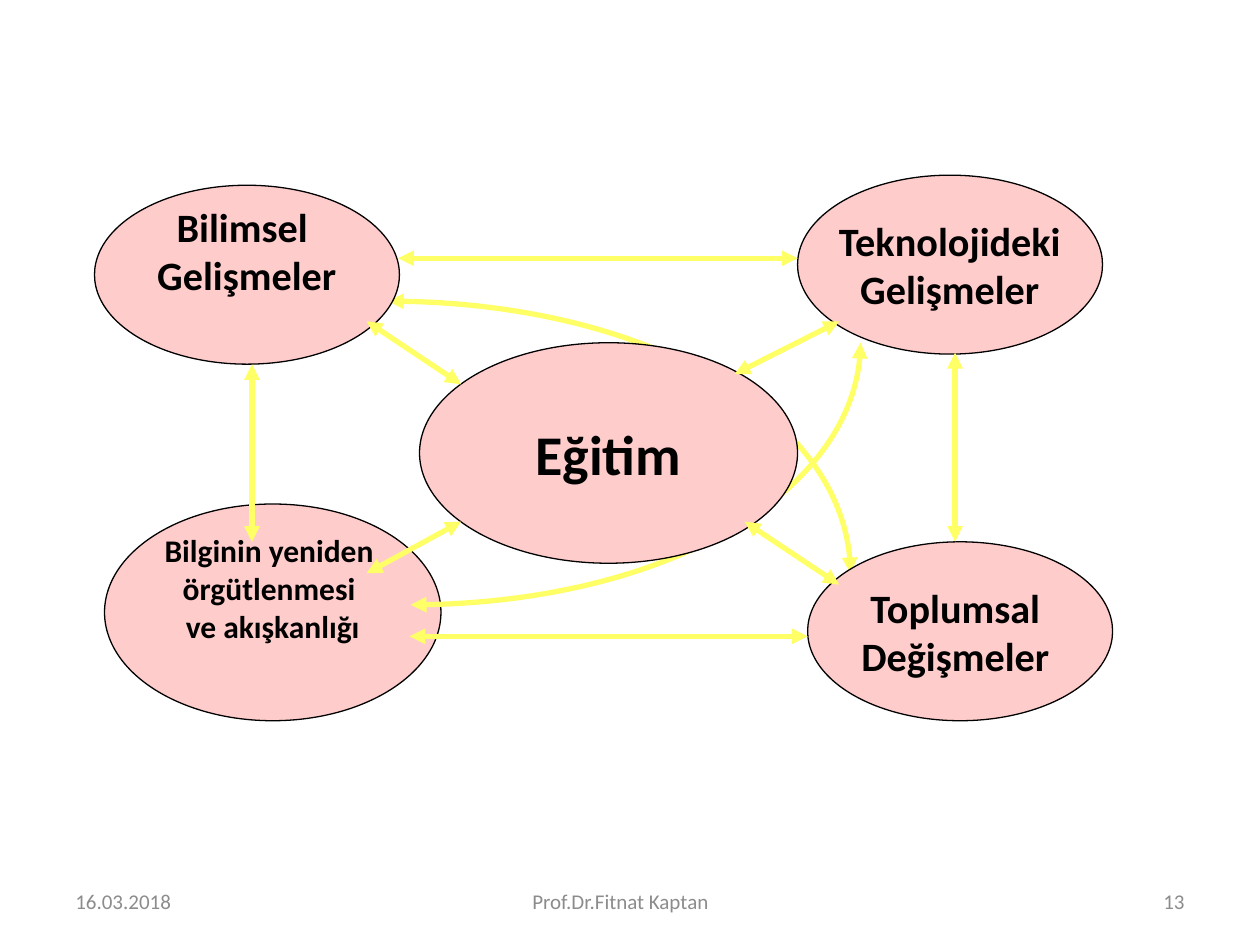
from lxml import etree
from pptx import Presentation
from pptx import util as u
from pptx.dml.color import RGBColor
from pptx.enum import shapes, text
from pptx.oxml.ns import qn

PINK = RGBColor(0xFF, 0xCC, 0xCC)
YELLOW = RGBColor(0xFF, 0xFF, 0x66)
BLACK = RGBColor(0, 0, 0)
GRAY = RGBColor(0x8C, 0x8C, 0x8C)
FONT = "Calibri"
LEFT, CENTER, RIGHT = text.PP_ALIGN.LEFT, text.PP_ALIGN.CENTER, text.PP_ALIGN.RIGHT

# Ellipses: lines, size in points, (left, top, width, height), upward text lift
KNOWLEDGE = (["Bilginin yeniden ", "örgütlenmesi ", "ve akışkanlığı"], 18, (0.83, 4, 2.67, 1.72), 0.39)
TOPICS = [
    (["Eğitim"], 32, (3.33, 2.72, 3, 1.75), 0),
    (["Teknolojideki", "Gelişmeler"], 23, (6.33, 1.39, 2.42, 1.42), 0),
    (["Toplumsal ", "Değişmeler "], 23, (6.41, 4.3, 2.42, 1.42), 0),
    (["Bilimsel ", "Gelişmeler"], 23, (0.75, 1.47, 2.42, 1.42), 0.39),
]
# Quarter-ellipse links: start and end, leaving horizontally, arriving vertically
CURVES = [((3.26, 4.8), (6.83, 2.72)), ((3.08, 2.39), (6.75, 4.55))]
# Straight links: start and end
LINKS = [
    ((3.66, 4.14), (2.91, 4.55)),
    ((6.66, 2.55), (5.83, 2.97)),
    ((3.66, 3.05), (2.91, 2.55)),
    ((6.66, 4.64), (5.91, 4.14)),
    ((2, 2.89), (2, 4.3)),
    ((7.58, 2.8), (7.58, 4.3)),
    ((3.25, 5.05), (6.41, 5.05)),
    ((3.16, 2.05), (6.33, 2.05)),
]
# Footer: text, left, width, alignment, right inset
FOOTER = [
    ("16.03.2018", 0.5, 2.33, LEFT, 0.1),
    ("Prof.Dr.Fitnat Kaptan", 3.42, 3.17, CENTER, 0.26),
    ("13", 7.17, 2.33, RIGHT, 0.1),
]
ROUNDNESS = 0.5523  # Bezier handle length for a quarter ellipse


def write(shape, lines, size, color=BLACK, bold=False, align=CENTER,
          wrap=False, right=0.1, bottom=0.05):
    frame = shape.text_frame
    frame.word_wrap = wrap
    frame.vertical_anchor = text.MSO_ANCHOR.MIDDLE
    frame.margin_right = u.Inches(right)
    frame.margin_bottom = u.Inches(bottom)
    for index, line in enumerate(lines):
        paragraph = frame.paragraphs[0] if index == 0 else frame.add_paragraph()
        paragraph.alignment = align
        run = paragraph.add_run()
        run.text = line
        run.font.name, run.font.size, run.font.bold = FONT, u.Pt(size), bold
        run.font.color.rgb = color


def add_topic(slide, lines, size, box, lift):
    shape = slide.shapes.add_shape(shapes.MSO_SHAPE.OVAL, *map(u.Inches, box))
    shape.shadow.inherit = False
    shape.fill.solid()
    shape.fill.fore_color.rgb = PINK
    shape.line.color.rgb = BLACK
    shape.line.width = u.Pt(0.75)
    write(shape, lines, size, bold=True, bottom=0.05 + lift)


def style_arrow(shape):
    shape.line.color.rgb = YELLOW
    shape.line.width = u.Pt(3)
    line = shape.line._get_or_add_ln()
    for end in ("a:headEnd", "a:tailEnd"):
        etree.SubElement(line, qn(end), type="triangle")


def add_curve(slide, start, end):
    (x1, y1), (x2, y2) = start, end
    points = [(x1 + ROUNDNESS * (x2 - x1), y1), (x2, y2 - ROUNDNESS * (y2 - y1)), end]
    builder = slide.shapes.build_freeform(*map(u.Inches, start))
    builder.add_line_segments([tuple(map(u.Inches, p)) for p in points], close=False)
    shape = builder.convert_to_shape()
    shape.shadow.inherit = False
    shape.fill.background()
    style_arrow(shape)
    # Turn the three segments into one cubic curve
    segments = list(shape._element.iter(qn("a:lnTo")))
    curve = etree.SubElement(segments[0].getparent(), qn("a:cubicBezTo"))
    for segment in segments:
        curve.append(segment[0])
        segment.getparent().remove(segment)


def add_link(slide, start, end):
    connector = slide.shapes.add_connector(
        shapes.MSO_CONNECTOR.STRAIGHT, *map(u.Inches, start + end))
    style_arrow(connector)
    etree.SubElement(connector._element.spPr, qn("a:effectLst"))


def main():
    presentation = Presentation()
    presentation.slide_width, presentation.slide_height = u.Inches(10), u.Inches(7.5)
    slide = presentation.slides.add_slide(presentation.slide_layouts[6])

    # The curves lie above the knowledge ellipse and below the others
    add_topic(slide, *KNOWLEDGE)
    for curve in CURVES:
        add_curve(slide, *curve)
    for topic in TOPICS:
        add_topic(slide, *topic)
    for link in LINKS:
        add_link(slide, *link)

    # Footer
    for label, left, width, align, right in FOOTER:
        box = slide.shapes.add_textbox(*map(u.Inches, (left, 6.95, width, 0.4)))
        write(box, [label], 12, color=GRAY, align=align, wrap=True, right=right)

    presentation.save("out.pptx")


if __name__ == "__main__":
    main()
